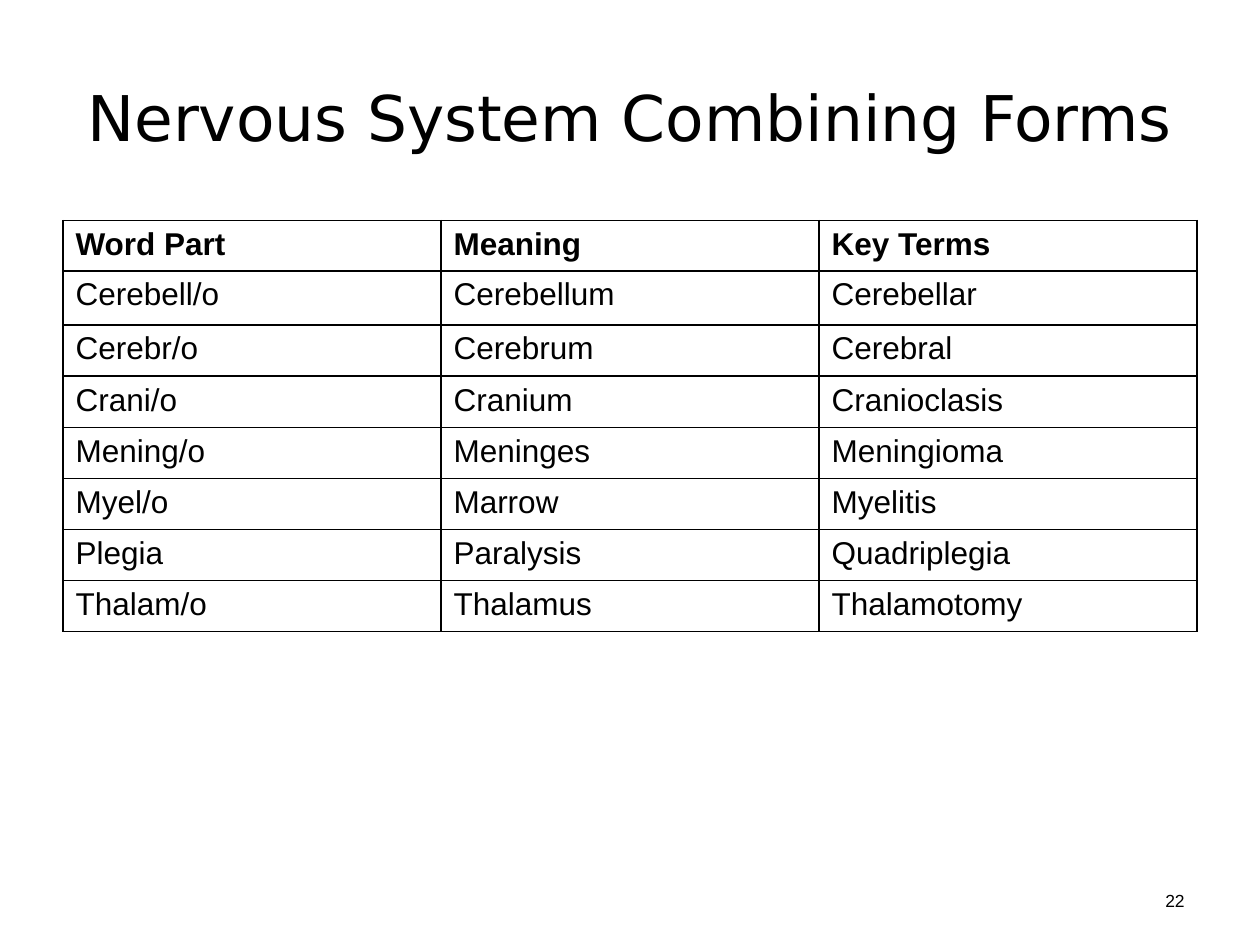
from dataclasses import dataclass

from lxml import etree
from pptx import Presentation
from pptx import util as u
from pptx.dml.color import RGBColor
from pptx.enum import text
from pptx.oxml import ns

Pt = u.Pt


@dataclass(frozen=True)
class Theme:
    ink: str = "000000"
    paper: str = "FFFFFF"
    title_font: str = "DejaVu Sans"
    body_font: str = "Arial"
    title_size: float = 36
    table_size: float = 18
    number_size: float = 10
    border: float = 1


ROWS = [
    ("Word Part", "Meaning", "Key Terms"),
    ("Cerebell/o", "Cerebellum", "Cerebellar"),
    ("Cerebr/o", "Cerebrum", "Cerebral"),
    ("Crani/o", "Cranium", "Cranioclasis"),
    ("Mening/o", "Meninges", "Meningioma"),
    ("Myel/o", "Marrow", "Myelitis"),
    ("Plegia", "Paralysis", "Quadriplegia"),
    ("Thalam/o", "Thalamus", "Thalamotomy"),
]


def write(tf, content, *, font, size, color, bold=False,
          align=text.PP_ALIGN.LEFT, anchor=None):
    tf.word_wrap = True
    if anchor is not None:
        tf.vertical_anchor = anchor
    p = tf.paragraphs[0]
    p.alignment = align
    r = p.add_run()
    r.text = content
    r.font.name = font
    r.font.size = Pt(size)
    r.font.bold = bold
    r.font.color.rgb = RGBColor.from_string(color)


class Deck:
    def __init__(self, theme, width, height):
        self.theme = theme
        self.prs = Presentation()
        self.prs.slide_width = Pt(width)
        self.prs.slide_height = Pt(height)
        self.s = None

    def slide(self):
        self.s = self.prs.slides.add_slide(self.prs.slide_layouts[5])
        fill = self.s.background.fill
        fill.solid()
        fill.fore_color.rgb = RGBColor.from_string(self.theme.paper)

    def title(self, content, x, y, w, h):
        t = self.theme
        sp = self.s.shapes.title
        sp.left, sp.top, sp.width, sp.height = map(Pt, (x, y, w, h))
        sp.text_frame.auto_size = text.MSO_AUTO_SIZE.NONE
        write(sp.text_frame, content, font=t.title_font, size=t.title_size,
              color=t.ink, align=text.PP_ALIGN.CENTER,
              anchor=text.MSO_ANCHOR.MIDDLE)

    def borders(self, cell):
        tc_pr = cell._tc.get_or_add_tcPr()
        for side in ("lnL", "lnR", "lnT", "lnB"):
            ln = etree.SubElement(tc_pr, ns.qn(f"a:{side}"),
                                  w=str(Pt(self.theme.border)))
            fill = etree.SubElement(ln, ns.qn("a:solidFill"))
            etree.SubElement(fill, ns.qn("a:srgbClr"), val=self.theme.ink)

    def table(self, rows, x, y, w, heights):
        t = self.theme
        count = len(rows[0])
        frame = self.s.shapes.add_table(len(rows), count, Pt(x), Pt(y),
                                        Pt(w), Pt(sum(heights)))
        table = frame.table
        for column in table.columns:
            column.width = Pt(w / count)
        for i, (values, height) in enumerate(zip(rows, heights)):
            table.rows[i].height = Pt(height)
            for j, value in enumerate(values):
                cell = table.cell(i, j)
                self.borders(cell)
                cell.fill.solid()
                cell.fill.fore_color.rgb = RGBColor.from_string(t.paper)
                write(cell.text_frame, value, font=t.body_font,
                      size=t.table_size, color=t.ink, bold=i == 0)

    def number(self, content, x, y, w, h):
        t = self.theme
        sp = self.s.shapes.add_textbox(Pt(x), Pt(y), Pt(w), Pt(h))
        write(sp.text_frame, content, font=t.body_font, size=t.number_size,
              color=t.ink, align=text.PP_ALIGN.RIGHT,
              anchor=text.MSO_ANCHOR.MIDDLE)


def main():
    deck = Deck(Theme(), 720, 540)
    margin, width = 36, 648
    deck.slide()
    deck.title("Nervous System Combining Forms", margin, 21.6, width, 90)
    heights = [28.8, 31] + [29.2] * (len(ROWS) - 2)
    deck.table(ROWS, margin, 126, width, heights)
    number_width = 40
    deck.number("22", margin + width - number_width, 493.2, number_width, 43.2)
    deck.prs.save("out.pptx")


if __name__ == "__main__":
    main()
